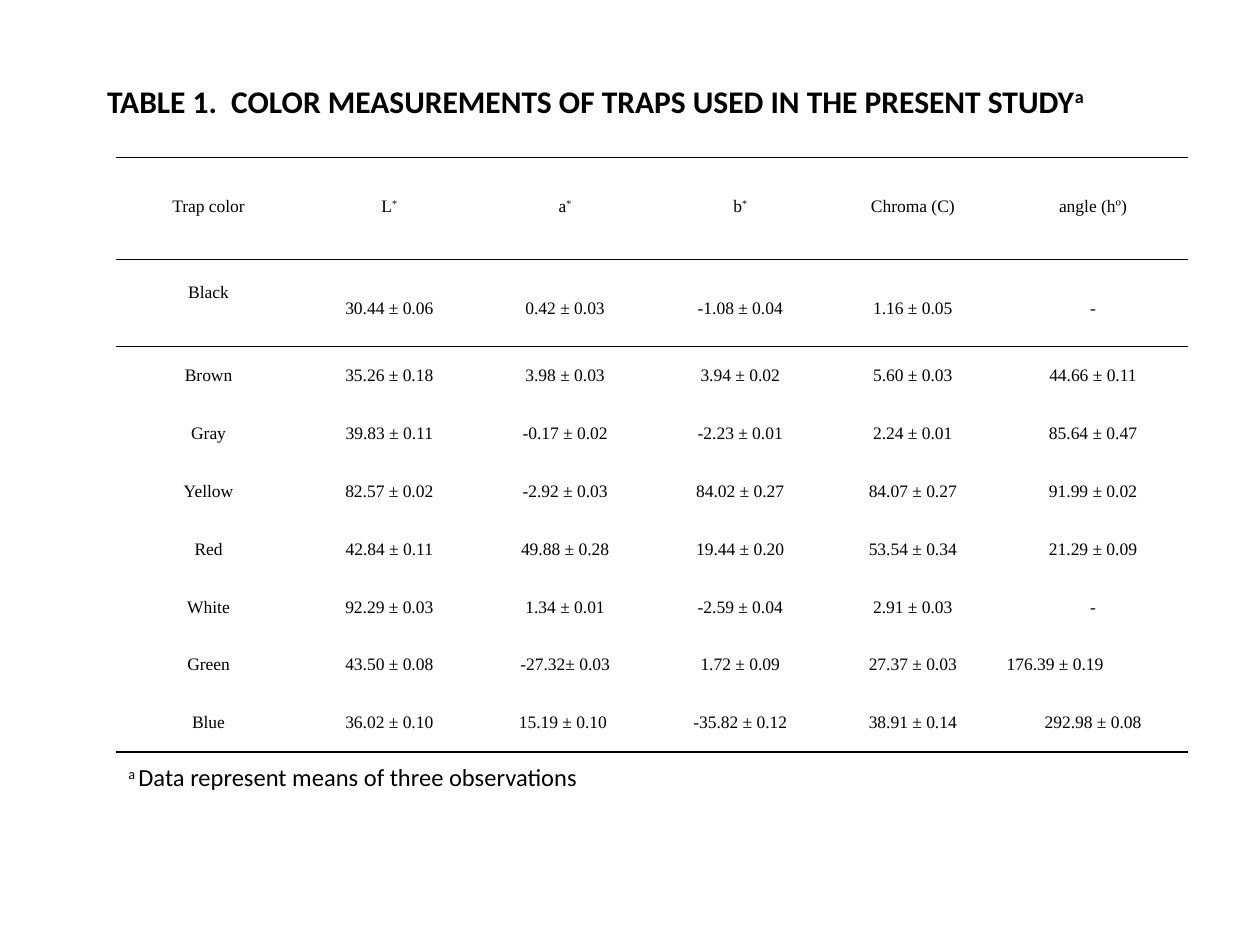
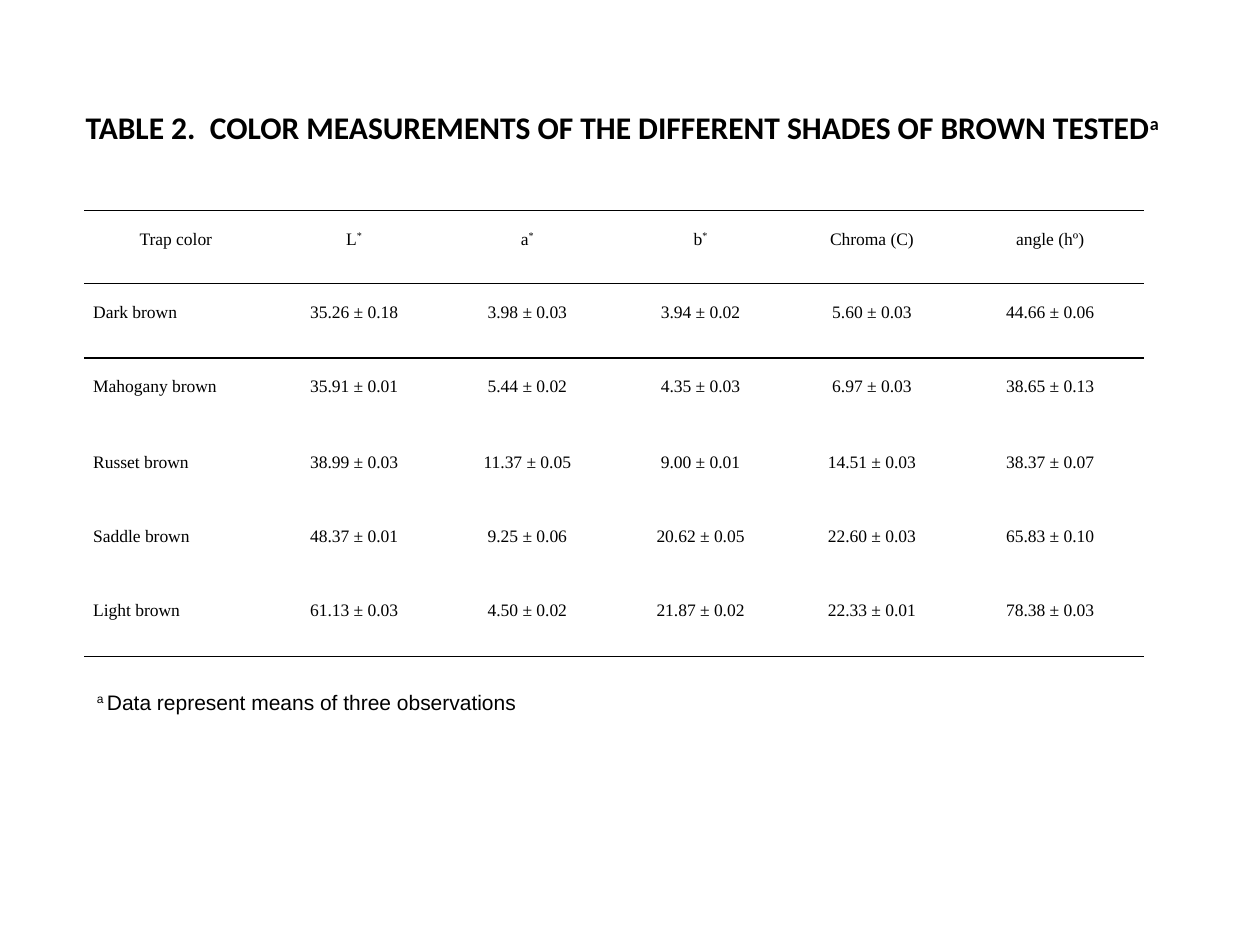
import dataclasses
import typing

import lxml.etree
import pptx
import pptx.dml.color
import pptx.enum.text
import pptx.oxml.ns
import pptx.util

Inches = pptx.util.Inches
Pt = pptx.util.Pt
ALIGN = pptx.enum.text.PP_ALIGN
ANCHOR = pptx.enum.text.MSO_ANCHOR

BLACK = pptx.dml.color.RGBColor(0x00, 0x00, 0x00)
TITLE_FONT = {"name": "Calibri", "size": Pt(18), "bold": True}
CELL_FONT = {"name": "Times New Roman", "size": Pt(10), "bold": False}
NO_TABLE_STYLE = "{2D5ABB26-0587-4C30-8999-92F81FD0307C}"
RULE_WIDTH = Pt(1)
HEADINGS = ("Trap color", "L^*", "a^*", "b^*", "Chroma (C)", "angle (hº)")
FOOTNOTE = "^a ^Data represent means of three observations"


class Frame(typing.NamedTuple):
    left: float
    top: float
    width: float
    height: float


class CellFormat(typing.NamedTuple):
    top_margin: float = 0
    line_spacing: float = 2
    alignment: ALIGN = ALIGN.CENTER


@dataclasses.dataclass
class TablePage:
    title: str
    title_frame: Frame
    table_frame: Frame
    column_widths: tuple[float, ...]
    row_heights: tuple[float, ...]
    rows: tuple[tuple[str, ...], ...]
    footnote_frame: Frame
    footnote_font: dict[str, typing.Any]
    footnote_anchor: ANCHOR
    cell_formats: dict[tuple[int, int], CellFormat]


def set_values(target: typing.Any, values: dict[str, typing.Any]) -> None:
    for name, value in values.items():
        setattr(target, name, value)


def write_text(para: typing.Any, text: str, font: dict[str, typing.Any]) -> None:
    for index, part in enumerate(text.split("^")):
        if not part:
            continue
        span = para.add_run()
        span.text = part
        set_values(span.font, font)
        span.font.color.rgb = BLACK
        if index % 2:
            span._r.get_or_add_rPr().set("baseline", "30000")


def place(shape: typing.Any, frame: Frame) -> None:
    set_values(shape, {name: Inches(value) for name, value in frame._asdict().items()})


def add_rule(cell: typing.Any, edge: str) -> None:
    properties = cell._tc.get_or_add_tcPr()
    line = lxml.etree.SubElement(
        properties, pptx.oxml.ns.qn(f"a:{edge}"), w=str(int(RULE_WIDTH))
    )
    fill = lxml.etree.SubElement(line, pptx.oxml.ns.qn("a:solidFill"))
    lxml.etree.SubElement(fill, pptx.oxml.ns.qn("a:srgbClr"), val=str(BLACK))


def fill_cell(cell: typing.Any, text: str, layout: CellFormat) -> None:
    set_values(cell, {
        "margin_left": Inches(0.07),
        "margin_right": Inches(0.07),
        "margin_top": Inches(layout.top_margin),
        "margin_bottom": 0,
        "vertical_anchor": ANCHOR.TOP,
    })
    para = cell.text_frame.paragraphs[0]
    set_values(para, {"alignment": layout.alignment, "line_spacing": layout.line_spacing})
    write_text(para, text, CELL_FONT)


def add_measurements(page: typing.Any, content: TablePage) -> None:
    rows = (HEADINGS, *content.rows)
    frame = [Inches(value) for value in content.table_frame]
    table = page.shapes.add_table(len(rows), len(HEADINGS), *frame).table
    set_values(table, {"first_row": False, "horz_banding": False})
    table._tbl.tblPr.find(pptx.oxml.ns.qn("a:tableStyleId")).text = NO_TABLE_STYLE
    for column, width in zip(table.columns, content.column_widths):
        column.width = Inches(width)
    for row, height in zip(table.rows, content.row_heights):
        row.height = Inches(height)
    for row_index, values in enumerate(rows):
        for column_index, text in enumerate(values):
            cell = table.cell(row_index, column_index)
            layout = content.cell_formats.get((row_index, column_index), CellFormat())
            fill_cell(cell, text, layout)
            if row_index in (0, 1):
                add_rule(cell, "lnT")
            if row_index in (0, len(rows) - 1):
                add_rule(cell, "lnB")
            cell.fill.background()


def add_title(page: typing.Any, content: TablePage) -> None:
    title = page.shapes.title
    place(title, content.title_frame)
    set_values(title.text_frame, {
        "vertical_anchor": ANCHOR.BOTTOM,
        "margin_bottom": Inches(0.34),
        "word_wrap": True,
        "auto_size": pptx.enum.text.MSO_AUTO_SIZE.NONE,
    })
    para = title.text_frame.paragraphs[0]
    para.alignment = ALIGN.LEFT
    write_text(para, content.title, TITLE_FONT)


def add_footnote(page: typing.Any, content: TablePage) -> None:
    box = page.shapes.add_textbox(*[Inches(value) for value in content.footnote_frame])
    set_values(box.text_frame, {
        "word_wrap": True, "vertical_anchor": content.footnote_anchor,
    })
    write_text(box.text_frame.paragraphs[0], FOOTNOTE, content.footnote_font)


PAGES = (
    TablePage(
        title="TABLE 1.  COLOR MEASUREMENTS OF TRAPS USED IN THE PRESENT STUDY^a",
        title_frame=Frame(0.75, 0.25, 8.67, 1.04),
        table_frame=Frame(0.92, 1.25, 8.5, 4.75),
        column_widths=(1.47, 1.4, 1.39, 1.39, 1.35, 1.51),
        row_heights=(0.81, 0.69) + (0.46,) * 7,
        rows=(
            ("Black", "30.44 ± 0.06", "0.42 ± 0.03", "-1.08 ± 0.04", "1.16 ± 0.05", "-"),
            ("Brown", "35.26 ± 0.18", "3.98 ± 0.03", "3.94 ± 0.02", "5.60 ± 0.03", "44.66 ± 0.11"),
            ("Gray", "39.83 ± 0.11", "-0.17 ± 0.02", "-2.23 ± 0.01", "2.24 ± 0.01", "85.64 ± 0.47"),
            ("Yellow", "82.57 ± 0.02", "-2.92 ± 0.03", "84.02 ± 0.27", "84.07 ± 0.27", "91.99 ± 0.02"),
            ("Red", "42.84 ± 0.11", "49.88 ± 0.28", "19.44 ± 0.20", "53.54 ± 0.34", "21.29 ± 0.09"),
            ("White", "92.29 ± 0.03", "1.34 ± 0.01", "-2.59 ± 0.04", "2.91 ± 0.03", "-"),
            ("Green", "43.50 ± 0.08", "-27.32± 0.03", "1.72 ± 0.09", "27.37 ± 0.03", "176.39 ± 0.19"),
            ("Blue", "36.02 ± 0.10", "15.19 ± 0.10 ", "-35.82 ± 0.12", "38.91 ± 0.14", "292.98 ± 0.08"),
        ),
        footnote_frame=Frame(0.92, 6, 6.88, 0.42),
        footnote_font={"name": "Calibri", "size": Pt(14)},
        footnote_anchor=ANCHOR.TOP,
        cell_formats={
            **{(row, column): CellFormat(top_margin=0.16) for row in (0, 1) for column in range(6)},
            (1, 0): CellFormat(top_margin=0.16, line_spacing=1.15),
            (7, 5): CellFormat(alignment=ALIGN.LEFT),
        },
    ),
    TablePage(
        title="TABLE 2.  COLOR MEASUREMENTS OF THE DIFFERENT SHADES OF BROWN TESTED^a",
        title_frame=Frame(0.58, 0.5, 8.92, 1),
        table_frame=Frame(0.67, 1.67, 8.42, 3.53),
        column_widths=(1.45, 1.38, 1.37, 1.38, 1.34, 1.49),
        row_heights=(0.58, 0.59, 0.6, 0.59, 0.59, 0.59),
        rows=(
            ("Dark brown", "35.26 ± 0.18", "3.98 ± 0.03", "3.94 ± 0.02", "5.60 ± 0.03", "44.66 ± 0.06"),
            ("Mahogany brown", "35.91 ± 0.01", "5.44 ± 0.02", "4.35 ± 0.03", "6.97 ± 0.03", "38.65 ± 0.13"),
            ("Russet brown", "38.99 ± 0.03", "11.37 ± 0.05", "9.00 ± 0.01", "14.51 ± 0.03", "38.37 ± 0.07"),
            ("Saddle brown", "48.37 ± 0.01", "9.25 ± 0.06", "20.62 ± 0.05", "22.60 ± 0.03", "65.83 ± 0.10"),
            ("Light brown", "61.13 ± 0.03", "4.50 ± 0.02", "21.87 ± 0.02", "22.33 ± 0.01", "78.38 ± 0.03"),
        ),
        footnote_frame=Frame(0.67, 5.42, 5.33, 0.3),
        footnote_font={"name": "Arial", "size": Pt(12)},
        footnote_anchor=ANCHOR.MIDDLE,
        cell_formats={(row, 0): CellFormat(alignment=ALIGN.LEFT) for row in range(1, 6)},
    ),
)


def main() -> None:
    deck = pptx.Presentation()
    set_values(deck, {"slide_width": Inches(10), "slide_height": Inches(7.5)})
    title_only = deck.slide_layouts.get_by_name("Title Only")
    for content in PAGES:
        page = deck.slides.add_slide(title_only)
        add_title(page, content)
        add_measurements(page, content)
        add_footnote(page, content)
    deck.save("out.pptx")


if __name__ == "__main__":
    main()
